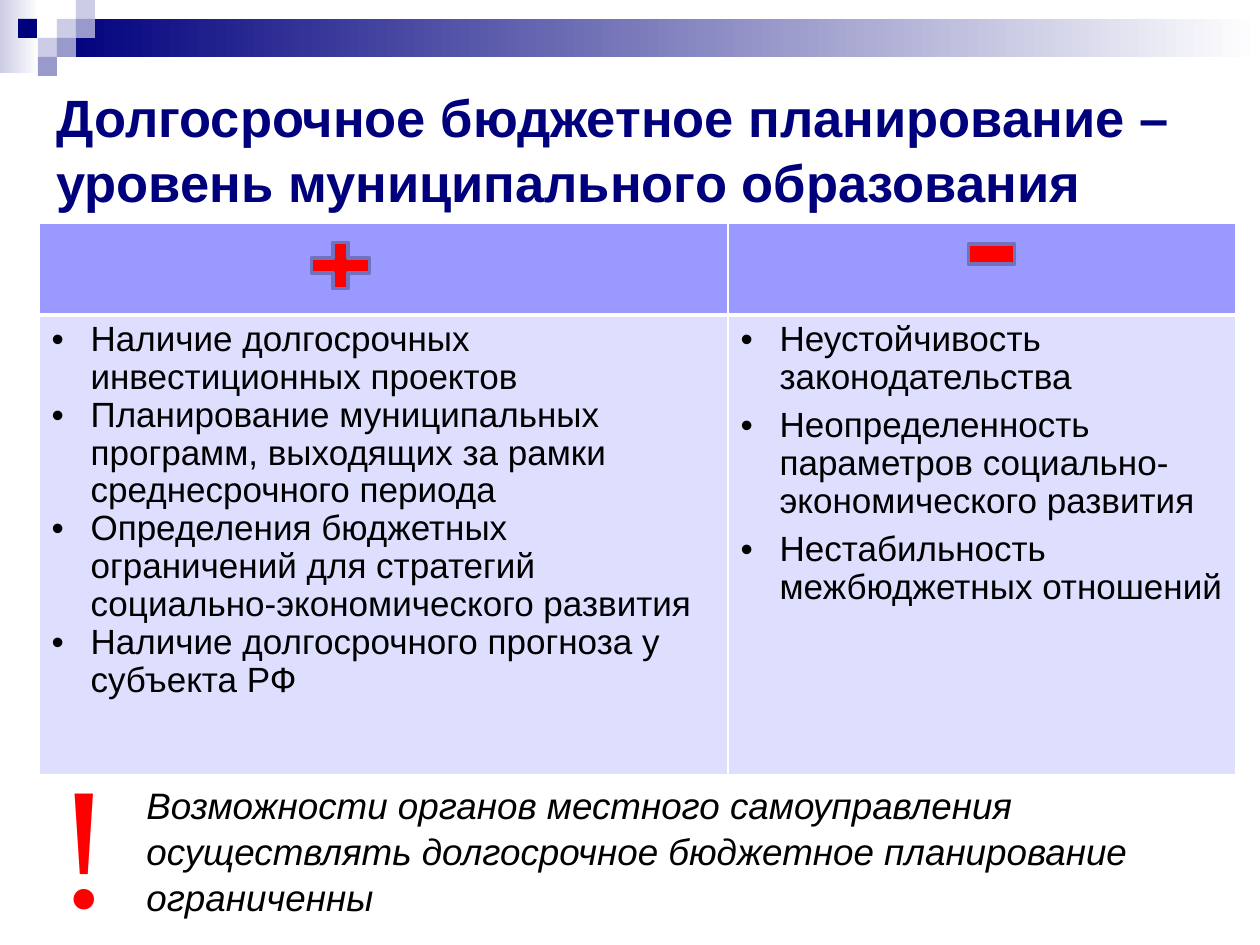
"""Build a slide on the pros and cons of long-term municipal budget planning."""
from lxml import etree
from pptx import Presentation
from pptx.dml.color import RGBColor
from pptx.enum.shapes import MSO_SHAPE
from pptx.enum.text import MSO_ANCHOR
from pptx.oxml.ns import qn
from pptx.util import Pt

PX = 914400 // 126
RECTANGLE = MSO_SHAPE.RECTANGLE
PLUS, MINUS = MSO_SHAPE.MATH_PLUS, MSO_SHAPE.MATH_MINUS
TOP = MSO_ANCHOR.TOP
NAVY, LILAC, VIOLET = "00007D", "CCCCE6", "9999CC"
WHITE, BLACK, RED = "FFFFFF", "000000", "FF0000"


def paint(color, value):
    color.rgb = RGBColor.from_string(value)


def add_run(paragraph, text, size, color, name="Arial"):
    run = paragraph.add_run()
    run.text = text
    run.font.size = Pt(size)
    run.font.name = name
    paint(run.font.color, color)
    return run


presentation = Presentation()
presentation.slide_width = 1260 * PX
presentation.slide_height = 945 * PX
slide = presentation.slides.add_slide(presentation.slide_layouts[6])

bands = [(0, 0, 39, 73, LILAC), (57, 19, 1203, 38, NAVY)]
for left, top, width, height, color in bands:
    band = slide.shapes.add_shape(RECTANGLE, left * PX, top * PX, width * PX, height * PX)
    band.shadow.inherit = False
    band.line.fill.background()
    band.fill.gradient()
    band.fill.gradient_angle = 0
    for stop, value in zip(band.fill.gradient_stops, (color, WHITE)):
        paint(stop.color, value)

squares = [(57, 19, LILAC), (76, 0, LILAC), (76, 19, VIOLET), (38, 38, LILAC),
           (18, 19, NAVY), (57, 38, VIOLET), (38, 57, VIOLET)]
for left, top, color in squares:
    square = slide.shapes.add_shape(RECTANGLE, left * PX, top * PX, 19 * PX, 19 * PX)
    square.shadow.inherit = False
    square.line.fill.background()
    square.fill.solid()
    paint(square.fill.fore_color, color)

title = slide.shapes.add_textbox(44 * PX, 76 * PX, 1197 * PX, 189 * PX)
title.text_frame.word_wrap = True
title.text_frame.vertical_anchor = TOP
paragraph = title.text_frame.paragraphs[0]
paragraph.line_spacing = 1.04
add_run(paragraph, "Долгосрочное бюджетное планирование –", 30, NAVY).font.bold = True
paragraph.add_line_break()
add_run(paragraph, "уровень муниципального образования", 30, NAVY).font.bold = True

note = slide.shapes.add_textbox(134 * PX, 775 * PX, 1081 * PX, 149 * PX)
note.text_frame.word_wrap = True
paragraph = note.text_frame.paragraphs[0]
paragraph.line_spacing = 1.04
add_run(paragraph, "Возможности органов местного самоуправления осуществлять "
        "долгосрочное бюджетное планирование ограниченны", 21, BLACK).font.italic = True

warning = slide.shapes.add_textbox(43 * PX, 728 * PX, 83 * PX, 223 * PX)
warning.text_frame.word_wrap = False
add_run(warning.text_frame.paragraphs[0], "!", 99, RED, "Times New Roman")

advantages = [
    "Наличие долгосрочных инвестиционных проектов",
    "Планирование муниципальных программ, выходящих за рамки среднесрочного периода",
    "Определения бюджетных ограничений для стратегий социально-экономического развития",
    "Наличие долгосрочного прогноза у субъекта РФ",
]
drawbacks = [
    "Неустойчивость законодательства",
    "Неопределенность параметров социально-экономического развития",
    "Нестабильность межбюджетных отношений",
]
table = slide.shapes.add_table(2, 2, 39 * PX, 223 * PX, 1197 * PX, 552 * PX).table
table.horz_banding = False
for column, width in zip(table.columns, (689, 508)):
    column.width = width * PX
for row, height in zip(table.rows, (92, 460)):
    row.height = height * PX

for row_index, fill in enumerate(("9999FF", "DEDEFF")):
    for column_index in range(2):
        cell = table.cell(row_index, column_index)
        properties = cell._tc.get_or_add_tcPr()
        for side in ("L", "R", "T", "B"):
            shared_edge = (row_index, side) in ((0, "B"), (1, "T"))
            border = etree.SubElement(properties, qn(f"a:ln{side}"), w=str(Pt(3 if shared_edge else 1)))
            solid = etree.SubElement(border, qn("a:solidFill"))
            etree.SubElement(solid, qn("a:srgbClr"), val=WHITE)
        cell.fill.solid()
        paint(cell.fill.fore_color, fill)

for column_index, (items, space_after) in enumerate(((advantages, 0), (drawbacks, 6))):
    frame = table.cell(1, column_index).text_frame
    for index, item in enumerate(items):
        paragraph = frame.add_paragraph() if index else frame.paragraphs[0]
        paragraph.space_after = Pt(space_after)
        paragraph.line_spacing = 0.97
        properties = paragraph._p.get_or_add_pPr()
        properties.set("marL", str(39 * PX))
        properties.set("indent", str(-39 * PX))
        etree.SubElement(properties, qn("a:buFont"), typeface="Arial")
        etree.SubElement(properties, qn("a:buChar"), char="•")
        add_run(paragraph, item, 20, BLACK)

signs = [(PLUS, 301, 234, 79, 63), (MINUS, 960, 212, 63, 84)]
for kind, left, top, width, height in signs:
    sign = slide.shapes.add_shape(kind, left * PX, top * PX, width * PX, height * PX)
    sign.shadow.inherit = False
    sign.fill.solid()
    paint(sign.fill.fore_color, RED)
    paint(sign.line.color, "7171BD")
    sign.line.width = Pt(2)

presentation.save("out.pptx")
